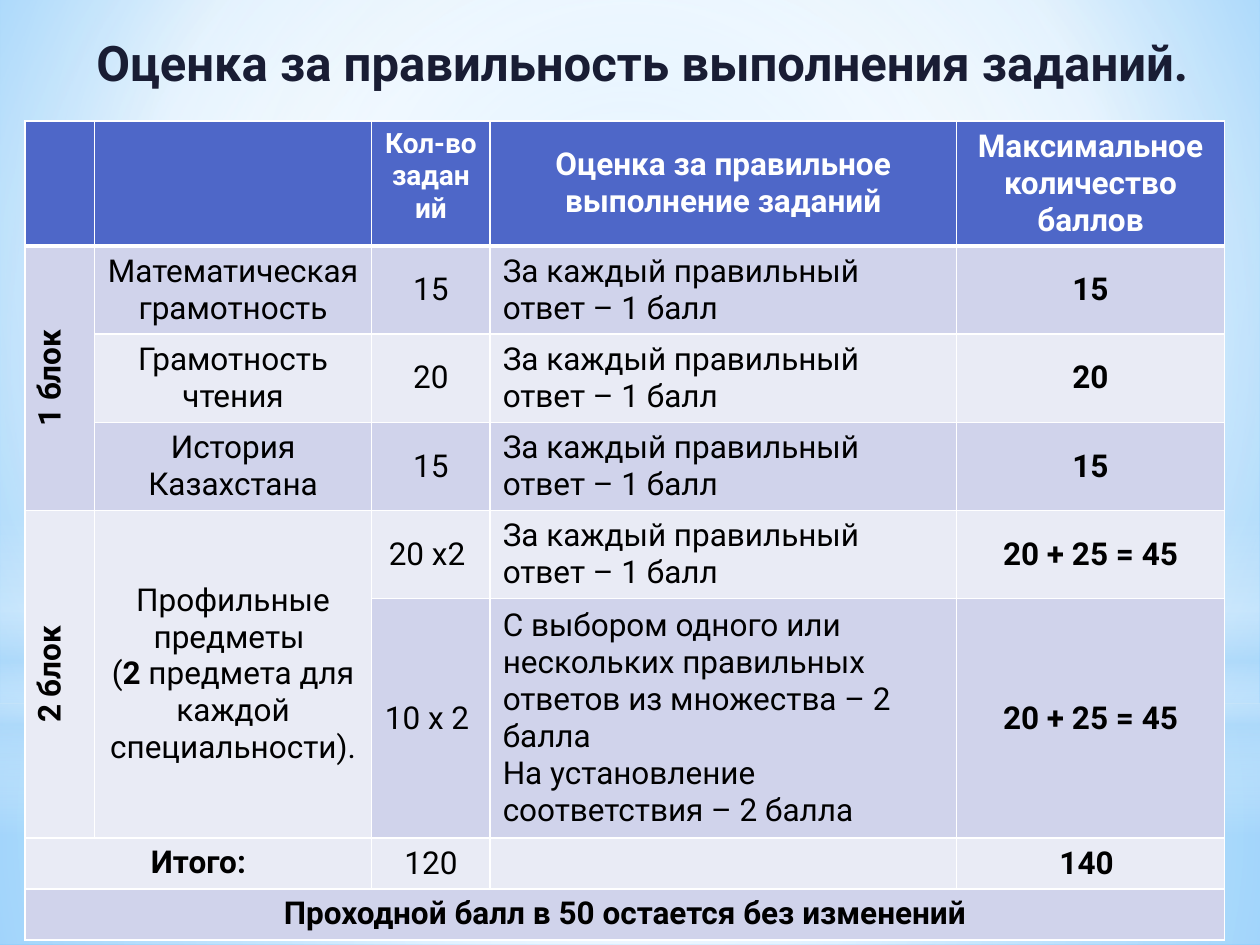
from pptx import Presentation
from pptx.dml.color import RGBColor
from pptx.enum.shapes import MSO_SHAPE
from pptx.enum.text import MSO_ANCHOR, PP_ALIGN
from pptx.oxml import parse_xml
from pptx.oxml.ns import nsdecls, qn
from pptx.util import Pt

RECTANGLE, OVAL = MSO_SHAPE.RECTANGLE, MSO_SHAPE.OVAL
TOP, MIDDLE = MSO_ANCHOR.TOP, MSO_ANCHOR.MIDDLE
LEFT, CENTER = PP_ALIGN.LEFT, PP_ALIGN.CENTER
FONT = "Roboto"
COLORS = {
    "title": "191D34", "header": "4E67C8", "dark_band": "D0D3EB",
    "light_band": "E9EBF5", "white": "FFFFFF", "black": "000000",
    "mist": "B4DCFA", "sky": "9ED5FF", "blue": "5BB9FF",
}


def write(frame, text, size=18, color="black", bold=False, align=CENTER):
    frame.word_wrap = True
    for index, line in enumerate(text.split("\n")):
        paragraph = frame.paragraphs[0] if index == 0 else frame.add_paragraph()
        paragraph.alignment = align
        for part_index, part in enumerate(line.split("**")):
            run = paragraph.add_run()
            run.text = part
            run.font.name = FONT
            run.font.size = Pt(size)
            run.font.bold = bold or part_index % 2 == 1
            run.font.color.rgb = RGBColor.from_string(COLORS[color])


def set_gradient(fill, parent, stops, center=None):
    fill.solid()
    stop_xml = "".join(
        f'<a:gs pos="{position * 1000}"><a:srgbClr val="{COLORS[color]}">'
        f'<a:alpha val="{opacity * 1000}"/></a:srgbClr></a:gs>'
        for position, color, opacity in stops
    )
    direction = '<a:lin ang="5400000" scaled="0"/>'
    if center:
        sides = " ".join(f'{side}="{value * 1000}"' for side, value in zip("ltrb", center))
        direction = f'<a:path path="circle"><a:fillToRect {sides}/></a:path>'
    gradient = parse_xml(
        f'<a:gradFill {nsdecls("a")} rotWithShape="1"><a:gsLst>{stop_xml}</a:gsLst>'
        f"{direction}</a:gradFill>"
    )
    parent.replace(parent.find(qn("a:solidFill")), gradient)


presentation = Presentation()
presentation.slide_width, presentation.slide_height = Pt(720), Pt(540)
slide = presentation.slides.add_slide(presentation.slide_layouts[5])

background_fill = slide.background.fill
background_fill.solid()
set_gradient(
    background_fill, slide.element.find(".//" + qn("p:bgPr")),
    [(0, "sky", 100), (60, "white", 100), (100, "blue", 100)], (20, 10, 20, 60),
)

middle = (50, 50, 50, 50)
glows = [
    (RECTANGLE, 0, 401.8, 138.2,
     [(0, "white", 91), (37, "white", 76), (100, "mist", 79)], middle),
    (RECTANGLE, 0, 0, 401.8,
     [(0, "white", 89), (48, "white", 62), (100, "mist", 79)], middle),
    (RECTANGLE, 0, 296.6, 180,
     [(0, "white", 0), (29, "white", 30), (45, "mist", 40),
      (55, "white", 26), (65, "mist", 60), (100, "white", 0)], None),
    (OVAL, 0, 126, 401.8, [(0, "white", 100), (56, "white", 0)], middle),
]
for kind, left, top, height, stops, center in glows:
    glow = slide.shapes.add_shape(kind, Pt(left), Pt(top), Pt(720), Pt(height))
    glow.shadow.inherit = False
    glow.line.fill.background()
    set_gradient(glow.fill, glow.element.spPr, stops, center)

title = slide.shapes.title
title.left, title.top, title.width, title.height = Pt(23.8), Pt(15.1), Pt(686.2), Pt(74.9)
title.text_frame.vertical_anchor = TOP
write(title.text_frame, "Оценка за правильность выполнения заданий.",
      size=28, color="title", bold=True)
glow.element.addnext(title.element)

column_widths = [39.6, 158.4, 67.7, 266.4, 153.4]
row_heights = [71.4] + [50.4] * 4 + [136.8, 29.1, 29.1]
per_answer = "За каждый правильный ответ – 1 балл"
rows = [
    ["", "", "Кол-во заданий", "Оценка за правильное выполнение заданий",
     "Максимальное количество баллов"],
    ["1 блок", "Математическая грамотность", "15", per_answer, "15"],
    ["", "Грамотность чтения", "20", per_answer, "20"],
    ["", "История Казахстана", "15", per_answer, "15"],
    ["2 блок", "Профильные предметы \n(**2** предмета для каждой специальности).",
     "20 х2 ", per_answer, "20 + 25 = 45"],
    ["", "", "10 х 2 ",
     "С выбором одного или нескольких правильных ответов из множества – 2 балла\n"
     "На установление соответствия – 2 балла", "20 + 25 = 45"],
    ["Итого:", "", "120", "", "140 "],
    ["Проходной балл в 50 остается без изменений", "", "", "", ""],
]
table = slide.shapes.add_table(
    len(rows), len(column_widths), Pt(14.4), Pt(69.1),
    Pt(sum(column_widths)), Pt(sum(row_heights)),
).table
for column, width in zip(table.columns, column_widths):
    column.width = Pt(width)
for row, height in zip(table.rows, row_heights):
    row.height = Pt(height)

for row_index, row in enumerate(rows):
    header = row_index == 0
    band = "header" if header else "dark_band" if row_index % 2 else "light_band"
    for column_index, text in enumerate(row):
        cell = table.cell(row_index, column_index)
        properties = cell._tc.get_or_add_tcPr()
        for side in "LRTB":
            thick = (row_index, side) in [(0, "B"), (1, "T")]
            properties.append(parse_xml(
                f'<a:ln{side} {nsdecls("a")} w="{Pt(3 if thick else 1)}"><a:solidFill>'
                f'<a:srgbClr val="{COLORS["white"]}"/></a:solidFill></a:ln{side}>'
            ))
        cell.fill.solid()
        cell.fill.fore_color.rgb = RGBColor.from_string(COLORS[band])
        if not text:
            continue
        narrow_header = header and column_index == 2
        cell.vertical_anchor = TOP if column_index == 0 or narrow_header else MIDDLE
        write(
            cell.text_frame, text,
            size=16 if narrow_header else 18,
            color="white" if header else "black",
            bold=header or column_index in (0, 4),
            align=LEFT if column_index == 3 and not header else CENTER,
        )
        if text.endswith("блок"):
            properties.set("vert", "vert270")

for first, last in [((1, 0), (3, 0)), ((4, 0), (5, 0)), ((4, 1), (5, 1)),
                    ((6, 0), (6, 1)), ((7, 0), (7, 4))]:
    table.cell(*first).merge(table.cell(*last))

presentation.save("out.pptx")
